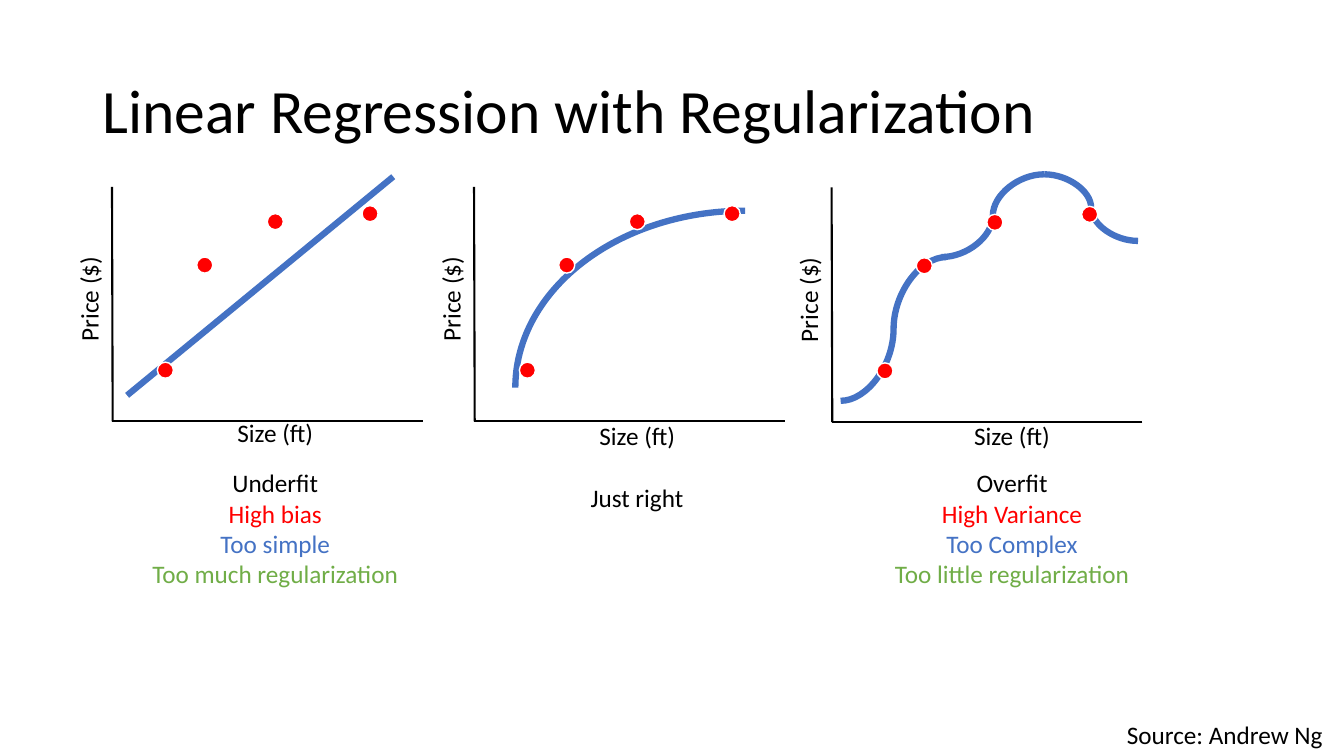
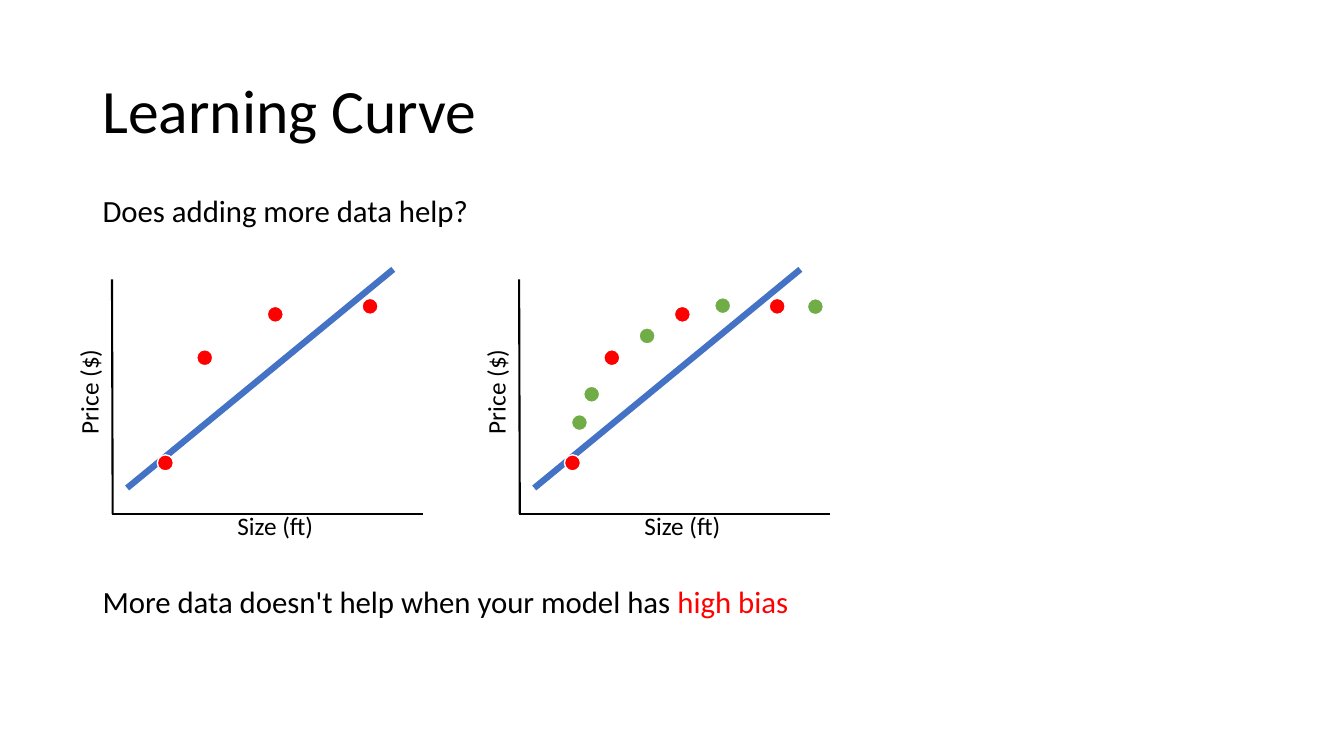
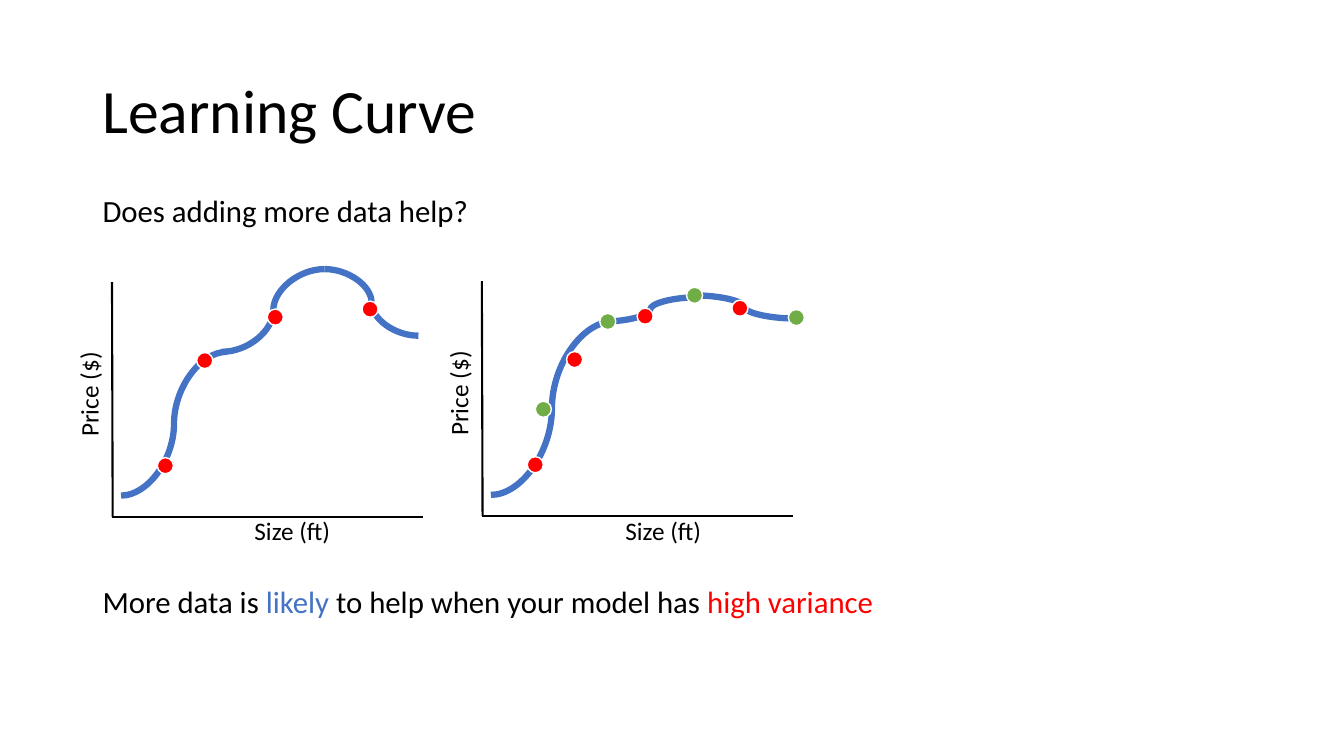
from dataclasses import dataclass

from lxml.etree import SubElement
from pptx import Presentation
from pptx.dml.color import RGBColor
from pptx.enum.shapes import MSO_CONNECTOR, MSO_SHAPE
from pptx.enum.text import MSO_ANCHOR, MSO_AUTO_SIZE, PP_ALIGN
from pptx.oxml.ns import qn
from pptx.util import Pt


@dataclass(frozen=True)
class Theme:
    font: str = "Calibri"
    black: RGBColor = RGBColor(0x00, 0x00, 0x00)
    white: RGBColor = RGBColor(0xFF, 0xFF, 0xFF)
    red: RGBColor = RGBColor(0xFF, 0x00, 0x00)
    blue: RGBColor = RGBColor(0x44, 0x72, 0xC4)
    green: RGBColor = RGBColor(0x70, 0xAD, 0x47)
    title_size: int = 44
    statement_size: int = 22
    label_size: int = 18
    axis_width: float = 1.5
    fit_width: float = 4.5
    dot_size: float = 11.5


THEME = Theme()
TITLE_ONLY = 5
AXIS_WIDTH, AXIS_HEIGHT = 222, 167.6
LABEL_WIDTH, LABEL_HEIGHT = 82, 29

TRAINING_DOTS = [(32.4, 125.3), (60.5, 50.2), (110.9, 19.2), (178.6, 13.5)]
STRAIGHT_FIT = [((200.9, -7.2), (10.8, 149))]
WAVY_FIT = [
    ((82.1, 49.7), (6.5, 152.4)),
    ((151.9, -9.4), (78.5, 49.7)),
    ((151.9, -9.4), (218.9, 38.2)),
]
SMOOTHED_FIT = [
    ((153.4, 11.5), (87.1, 28.8)),
    ((93.6, 28.8), (6.5, 152.6)),
    ((151.9, 10.1), (223.2, 26.6)),
]
ADDED_DOTS_STRAIGHT = [(46.1, 76.3), (139.7, 13), (85.7, 34.6), (205.9, 13.7), (37.4, 96.5)]
ADDED_DOTS_WAVY = [(38.2, 85.7), (84.2, 23), (146.2, 4.3), (218.9, 20.2)]


class Slides:
    def __init__(self, theme):
        self.theme = theme
        self.deck = Presentation()
        self.deck.slide_width, self.deck.slide_height = Pt(960), Pt(540)
        self.page = None

    def start(self, title):
        self.page = self.deck.slides.add_slide(self.deck.slide_layouts[TITLE_ONLY])
        box = self.page.shapes.title
        box.left, box.top, box.width, box.height = Pt(66), Pt(28.8), Pt(828), Pt(104.4)
        frame = box.text_frame
        frame.text = title
        frame.auto_size = MSO_AUTO_SIZE.NONE
        frame.vertical_anchor = MSO_ANCHOR.MIDDLE
        para = frame.paragraphs[0]
        para.alignment = PP_ALIGN.LEFT
        para.line_spacing = 0.9
        self.style(para, self.theme.title_size, self.theme.black)

    def style(self, para, size, color):
        para.font.name = self.theme.font
        para.font.size = Pt(size)
        para.font.color.rgb = color

    def text(self, left, top, width, height, lines, size=None, align=PP_ALIGN.LEFT, rotation=0):
        box = self.page.shapes.add_textbox(Pt(left), Pt(top), Pt(width), Pt(height))
        box.rotation = rotation
        frame = box.text_frame
        frame.word_wrap = True
        for index, spans in enumerate(lines):
            para = frame.add_paragraph() if index else frame.paragraphs[0]
            para.alignment = align
            self.style(para, size or self.theme.label_size, spans[0][1])
            for words, color in spans:
                span = para.add_run()
                span.text = words
                if len(spans) > 1:
                    span.font.color.rgb = color

    def label(self, left, top, words, width=LABEL_WIDTH, **options):
        self.text(left, top, width, LABEL_HEIGHT, [[(words, self.theme.black)]], **options)

    def statement(self, top, width, *spans):
        self.text(66.2, top, width, 34, [spans], self.theme.statement_size)

    def caption(self, left, top, height, *words):
        colors = (self.theme.black, self.theme.red, self.theme.blue, self.theme.green)
        lines = [[pair] for pair in zip(words, colors)]
        self.text(left, top, 216, height, lines, align=PP_ALIGN.CENTER)

    def line(self, start, end, color, width, kind=MSO_CONNECTOR.STRAIGHT):
        points = [Pt(value) for value in (*start, *end)]
        connector = self.page.shapes.add_connector(kind, *points)
        connector.line.color.rgb = color
        connector.line.width = Pt(width)
        SubElement(connector.element.spPr, qn("a:effectLst"))

    def arc(self, left, top, width, height):
        arc = self.page.shapes.add_shape(MSO_SHAPE.ARC, Pt(left), Pt(top), Pt(width), Pt(height))
        arc.element.spPr.xfrm.set("flipH", "1")
        arc.shadow.inherit = False
        arc.fill.background()
        arc.line.color.rgb = self.theme.blue
        arc.line.width = Pt(self.theme.fit_width)

    def dot(self, left, top, color):
        size = Pt(self.theme.dot_size)
        dot = self.page.shapes.add_shape(MSO_SHAPE.OVAL, Pt(left), Pt(top), size, size)
        dot.shadow.inherit = False
        dot.fill.solid()
        dot.fill.fore_color.rgb = color
        dot.line.color.rgb = self.theme.white
        dot.line.width = Pt(1)

    def plot(self, left, top, fit=(), curved=False, arc=None, added=(), size_label=(75.6, 161.3)):
        theme = self.theme
        kind = MSO_CONNECTOR.CURVE if curved else MSO_CONNECTOR.STRAIGHT
        for start, end in fit:
            self.line(
                (left + start[0], top + start[1]),
                (left + end[0], top + end[1]),
                theme.blue, theme.fit_width, kind,
            )
        if arc:
            self.arc(left + arc[0], top + arc[1], arc[2], arc[3])
        bottom = top + AXIS_HEIGHT
        self.line((left, top), (left + 0.5, bottom), theme.black, theme.axis_width)
        self.line((left + AXIS_WIDTH, bottom), (left, bottom), theme.black, theme.axis_width)
        self.label(left - 57.6, top + 62, "Price ($)", rotation=270)
        self.label(left + size_label[0], top + size_label[1], "Size (ft)", align=PP_ALIGN.CENTER)
        for dots, color in ((TRAINING_DOTS, theme.red), (added, theme.green)):
            for across, down in dots:
                self.dot(left + across, top + down, color)

    def save(self):
        self.deck.save("out.pptx")


def regularization(slides):
    slides.start("Linear Regression with Regularization")
    slides.plot(80, 133.4, STRAIGHT_FIT)
    slides.plot(338.6, 133.4, arc=(29.5, 17.1, 328.3, 252.7), size_label=(75.6, 163.4))
    slides.plot(594, 133.9, WAVY_FIT, curved=True, size_label=(87.8, 163))
    slides.caption(88.6, 330.5, 160, "Underfit", "High bias", "Too simple", "Too much regularization")
    slides.caption(614.9, 330.5, 117, "Overfit", "High Variance", "Too Complex", "Too little regularization")
    slides.caption(347, 341.3, LABEL_HEIGHT, "Just right")
    slides.label(797.8, 510.5, "Source: Andrew Ng", width=162)


def learning_curve(slides, *conclusion):
    slides.start("Learning Curve")
    slides.statement(133.2, 435.6, ("Does adding more data help?", slides.theme.black))
    slides.statement(412.6, 599, *conclusion)


def main():
    slides = Slides(THEME)
    regularization(slides)

    learning_curve(
        slides,
        ("More data doesn't help when your model has ", THEME.black),
        ("high bias", THEME.red),
    )
    slides.plot(80, 199.6, STRAIGHT_FIT)
    slides.plot(370.8, 199.6, STRAIGHT_FIT, added=ADDED_DOTS_STRAIGHT)

    learning_curve(
        slides,
        ("More data is ", THEME.black),
        ("likely", THEME.blue),
        (" to help when your model has ", THEME.black),
        ("high variance", THEME.red),
    )
    slides.plot(80, 201.6, WAVY_FIT, curved=True, size_label=(87.8, 163))
    slides.plot(344.2, 200.9, SMOOTHED_FIT, curved=True, added=ADDED_DOTS_WAVY, size_label=(88.6, 163.4))
    slides.save()


if __name__ == "__main__":
    main()
